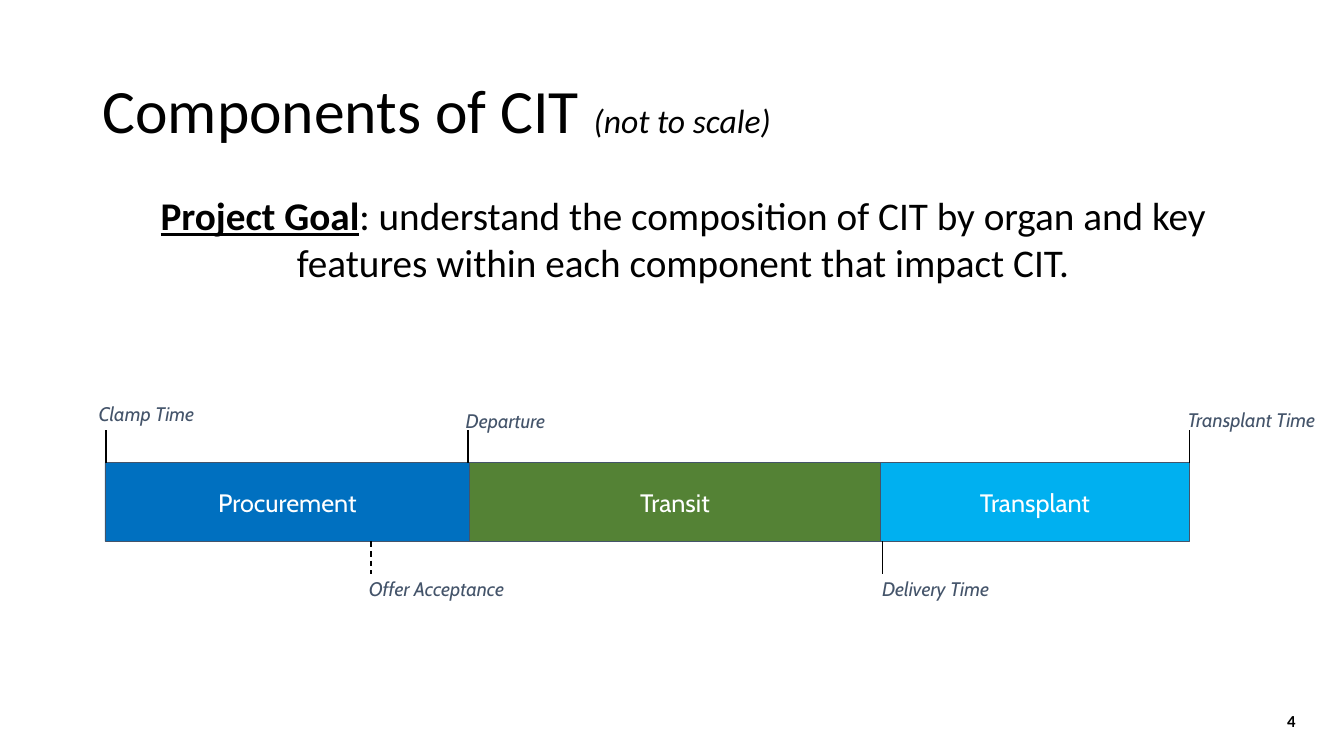
from pptx import Presentation
from pptx.dml.color import RGBColor
from pptx.enum.dml import MSO_LINE
from pptx.enum.shapes import MSO_CONNECTOR, MSO_SHAPE
from pptx.enum.text import MSO_ANCHOR, PP_ALIGN
from pptx.oxml.ns import qn
from pptx.util import Emu, Pt
from lxml import etree

# Content: lengths in px, 100 px to the inch
COLORS = {"black": "000000", "white": "FFFFFF", "slate": "44546A",
          "blue": "0070C0", "green": "548235", "sky": "00B0F0"}

TITLE = [("Components of CIT ", {"size": 44}),
         ("(not to scale)", {"size": 24, "italic": True})]
GOAL = [("Project Goal", {"size": 28, "bold": True, "underline": True}),
        (": understand the composition of CIT by organ and key features "
         "within each component that impact CIT.", {"size": 28})]
PAGE = [("4", {"size": 12, "bold": True})]

# Phase name, width, fill
BAR_LEFT, BAR_TOP, BAR_H = 104, 459, 78
PHASES = [("Procurement", 362, "blue"),
          ("Transit", 407, "green"),
          ("Transplant", 307, "sky")]

# Event name, tick x, above the bar, dashed, label left, label top, label width
EVENTS = [("Clamp Time", 105, True, False, 88, 394, 164),
          ("Departure", 464, True, False, 452, 401, 164),
          ("Offer Acceptance", 368, False, True, 356, 567, 190),
          ("Delivery Time", 875, False, False, 865, 567, 164),
          ("Transplant Time", 1180, True, False, 1168, 400, 164)]
TICK, LABEL_H = 32, 34


def px(n):
    return Emu(n * 9144)


def rgb(name):
    return RGBColor.from_string(COLORS[name])


def add_runs(tf, runs, align=PP_ALIGN.LEFT, anchor=MSO_ANCHOR.TOP,
             font="Calibri", color="black"):
    tf.word_wrap = True
    tf.vertical_anchor = anchor
    p = tf.paragraphs[0]
    p.alignment = align
    for text, style in runs:
        r = p.add_run()
        r.text = text
        r.font.name = font
        r.font.color.rgb = rgb(color)
        r.font.size = Pt(style["size"])
        r.font.bold = style.get("bold", False)
        r.font.italic = style.get("italic", False)
        r.font.underline = style.get("underline", False)
    return p


def add_text(box, runs, **options):
    sp = slide.shapes.add_textbox(*map(px, box))
    return add_runs(sp.text_frame, runs, **options)


prs = Presentation()
prs.slide_width, prs.slide_height = px(1333), px(750)
slide = prs.slides.add_slide(prs.slide_layouts[6])

# Title, goal and page number
p = add_text((92, 40, 1150, 145), TITLE, anchor=MSO_ANCHOR.MIDDLE)
p.line_spacing = 0.9
add_text((105, 185, 1145, 104), GOAL, align=PP_ALIGN.CENTER)
add_text((995, 695, 300, 40), PAGE, align=PP_ALIGN.RIGHT,
         anchor=MSO_ANCHOR.MIDDLE)

# Timeline bar
left = BAR_LEFT
for name, width, fill in PHASES:
    sp = slide.shapes.add_shape(MSO_SHAPE.RECTANGLE, px(left), px(BAR_TOP),
                                px(width), px(BAR_H))
    sp.shadow.inherit = False
    sp.fill.solid()
    sp.fill.fore_color.rgb = rgb(fill)
    sp.line.color.rgb = rgb("slate")
    sp.line.width = Pt(0.5)
    add_runs(sp.text_frame, [(name, {"size": 18})], align=PP_ALIGN.CENTER,
             anchor=MSO_ANCHOR.MIDDLE, font="Cabin", color="white")
    left += width

# Event ticks and labels
for name, x, above, dashed, label_left, label_top, label_w in EVENTS:
    top = BAR_TOP - TICK if above else BAR_TOP + BAR_H
    tick = slide.shapes.add_connector(MSO_CONNECTOR.STRAIGHT, px(x), px(top),
                                      px(x), px(top + TICK))
    tick.line.color.rgb = rgb("black")
    tick.line.width = Pt(1)
    if dashed:
        tick.line.dash_style = MSO_LINE.DASH
    etree.SubElement(tick._element.spPr, qn("a:effectLst"))
    add_text((label_left, label_top, label_w, LABEL_H),
             [(name, {"size": 14, "italic": True})],
             font="Cabin", color="slate")

prs.save("out.pptx")
